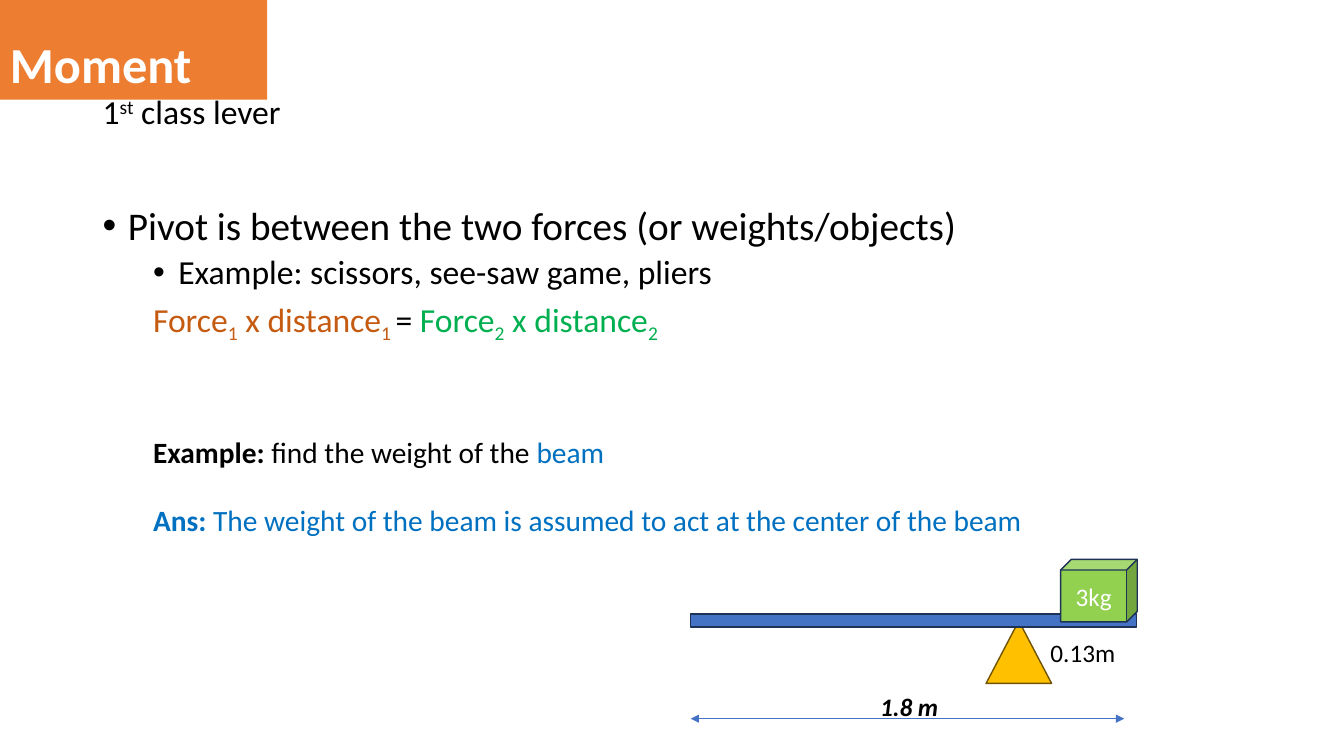
import pptx
import pptx.util
import pptx.dml.color
import pptx.enum.shapes
import pptx.enum.text
import pptx.oxml
import pptx.oxml.ns

SCALE = 9144
KINDS = pptx.enum.shapes.MSO_SHAPE
ALIGN = pptx.enum.text.PP_ALIGN
ANCHOR = pptx.enum.text.MSO_ANCHOR
FONT = "Calibri"

BLACK = "000000"
WHITE = "FFFFFF"
RUST = "C55A11"
GREEN = "00B050"
BLUE = "0070C0"
NAVY = "1E3256"
BEAM_BLUE = "4472C4"


def px(length):
    return pptx.util.Emu(length * SCALE)


def colour(code):
    return pptx.dml.color.RGBColor.from_string(code)


def add_xml(parent, tag, **attributes):
    element = pptx.oxml.parse_xml(f"<a:{tag} {pptx.oxml.ns.nsdecls('a')}/>")
    for name, value in attributes.items():
        element.set(name, str(value))
    parent.append(element)


def text(words, size=24, ink=BLACK, bold=False, italic=False, shift=0):
    return dict(words=words, size=size, ink=ink, bold=bold, italic=italic, shift=shift)


def paragraph(*spans, before=0, left=0, bullet=False, spacing=0.9, align=ALIGN.LEFT):
    return dict(spans=spans, before=before, left=left, bullet=bullet,
                spacing=spacing, align=align)


class Slide:
    def __init__(self):
        self.deck = pptx.Presentation()
        self.deck.slide_width = px(1333)
        self.deck.slide_height = px(750)
        self.page = self.deck.slides.add_slide(self.deck.slide_layouts[6])

    def set_text(self, box, paragraphs, anchor):
        frame = box.text_frame
        frame.word_wrap = True
        frame.vertical_anchor = anchor
        for index, content in enumerate(paragraphs):
            para = frame.add_paragraph() if index else frame.paragraphs[0]
            para.alignment = content["align"]
            para.line_spacing = content["spacing"]
            para.space_before = pptx.util.Pt(content["before"])
            properties = para._p.get_or_add_pPr()
            properties.set("marL", str(px(content["left"])))
            properties.set("indent", str(px(-25 if content["bullet"] else 0)))
            if content["bullet"]:
                add_xml(properties, "buFont", typeface="Arial")
                add_xml(properties, "buChar", char="•")
            else:
                add_xml(properties, "buNone")
            for part in content["spans"]:
                span = para.add_run()
                span.text = part["words"]
                span.font.name = FONT
                span.font.size = pptx.util.Pt(part["size"])
                span.font.bold = part["bold"]
                span.font.italic = part["italic"]
                span.font.color.rgb = colour(part["ink"])
                if part["shift"]:
                    span._r.get_or_add_rPr().set("baseline", str(part["shift"] * 1000))

    def label(self, left, top, width, height, *paragraphs, anchor=ANCHOR.TOP):
        box = self.page.shapes.add_textbox(px(left), px(top), px(width), px(height))
        self.set_text(box, paragraphs, anchor)

    def shape(self, kind, left, top, width, height, fill, line=None,
              paragraphs=(), anchor=ANCHOR.MIDDLE, adjust=None):
        box = self.page.shapes.add_shape(kind, px(left), px(top), px(width), px(height))
        box.shadow.inherit = False
        box.fill.solid()
        box.fill.fore_color.rgb = colour(fill)
        if line:
            box.line.color.rgb = colour(line)
            box.line.width = pptx.util.Pt(1)
        else:
            box.line.fill.background()
        if adjust is not None:
            box.adjustments[0] = adjust
        self.set_text(box, paragraphs, anchor)

    def span_arrow(self, left, right, height, ink):
        arrow = self.page.shapes.add_connector(
            pptx.enum.shapes.MSO_CONNECTOR.STRAIGHT,
            px(left), px(height), px(right), px(height))
        arrow.line.color.rgb = colour(ink)
        arrow.line.width = pptx.util.Pt(0.5)
        for end in ("headEnd", "tailEnd"):
            add_xml(arrow.line._get_or_add_ln(), end, type="triangle")
        add_xml(arrow._element.spPr, "effectLst")

    def save(self):
        self.deck.save("out.pptx")


def force_and_distance(number, ink, gap=""):
    return [text("Force", ink=ink), text(number, ink=ink, shift=-25),
            text(" x distance", ink=ink), text(number + gap, ink=ink, shift=-25)]


def main():
    slide = Slide()
    slide.label(92, 40, 1150, 145,
                paragraph(text("1"), text("st", shift=30), text(" class lever")),
                anchor=ANCHOR.MIDDLE)
    slide.label(
        92, 200, 1150, 476,
        paragraph(text("Pivot is between the two forces (or weights/objects)", size=28),
                  before=10, left=25, bullet=True),
        paragraph(text("Example: scissors, see-saw game, pliers"),
                  before=5, left=75, bullet=True),
        paragraph(*force_and_distance("1", RUST, " "), text("= "),
                  *force_and_distance("2", GREEN), before=5, left=50),
        paragraph(text("Example:", size=21, bold=True),
                  text(" find the weight of the ", size=21),
                  text("beam", size=21, ink=BLUE), before=70, left=50),
        paragraph(text("Ans: ", size=21, ink=BLUE, bold=True),
                  text("The weight of the beam is assumed to act at the center of the beam",
                       size=21, ink=BLUE), before=26, left=50))
    slide.shape(KINDS.RECTANGLE, 0, -2, 265, 101, "ED7D31",
                paragraphs=[paragraph(text("Moment", size=36, ink=WHITE, bold=True))],
                anchor=ANCHOR.BOTTOM)
    slide.shape(KINDS.ISOSCELES_TRIANGLE, 978, 616, 65, 62, "FFC000", "705400")
    slide.shape(KINDS.RECTANGLE, 685, 609, 442, 13, BEAM_BLUE, NAVY)
    slide.shape(KINDS.CUBE, 1052, 555, 76, 62, "92D050", NAVY, adjust=0.17,
                paragraphs=[paragraph(text("3kg", size=18, ink=WHITE),
                                      spacing=1.0, align=ALIGN.CENTER)])
    slide.label(1032, 627, 115, 40, paragraph(text("0.13m", size=18), spacing=1.0))
    slide.span_arrow(685, 1115, 713, BEAM_BLUE)
    slide.label(863, 681, 189, 40,
                paragraph(text("1.8 m", size=18, bold=True, italic=True), spacing=1.0))
    slide.save()


if __name__ == "__main__":
    main()
